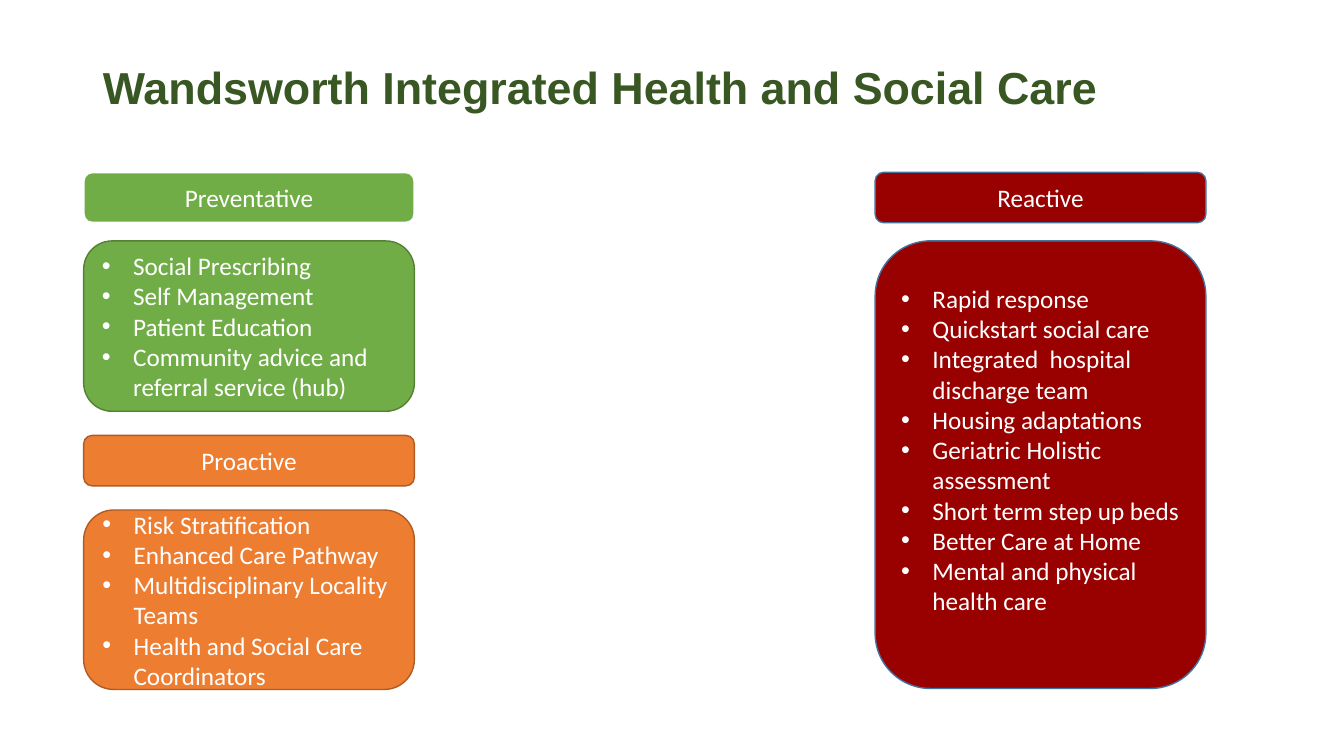
from lxml import etree
from pptx import Presentation
from pptx.dml.color import RGBColor
from pptx.enum.shapes import MSO_SHAPE
from pptx.enum.text import MSO_ANCHOR, PP_ALIGN
from pptx.oxml.ns import qn
from pptx.util import Inches, Pt

ROUND = MSO_SHAPE.ROUNDED_RECTANGLE
MIDDLE = MSO_ANCHOR.MIDDLE
LEFT, CENTER = PP_ALIGN.LEFT, PP_ALIGN.CENTER

WHITE = RGBColor(0xFF, 0xFF, 0xFF)
FOREST = RGBColor(0x38, 0x57, 0x23)
GREEN = RGBColor(0x70, 0xAD, 0x47)
MOSS = RGBColor(0x53, 0x80, 0x35)
ORANGE = RGBColor(0xED, 0x7D, 0x31)
RUST = RGBColor(0xAF, 0x5C, 0x24)
RED = RGBColor(0x99, 0x00, 0x00)
BLUE = RGBColor(0x43, 0x73, 0x9E)

WIDTH, HEAD = 3.28, 0.5  # card width, heading height
INDENT = Inches(0.31)


def add_card(x, y, height, fill, edge, weight, lines):
    card = slide.shapes.add_shape(
        ROUND, Inches(x), Inches(y), Inches(WIDTH), Inches(height))
    card.shadow.inherit = False
    card.fill.solid()
    card.fill.fore_color.rgb = fill
    card.line.color.rgb = edge
    card.line.width = Pt(weight)
    frame = card.text_frame
    frame.word_wrap = True
    frame.vertical_anchor = MIDDLE
    frame.text = "\n".join(lines)
    for para in frame.paragraphs:
        para.alignment = CENTER
        para.font.name = "Calibri"
        para.font.size = Pt(18)
        para.font.color.rgb = WHITE
    return frame


def add_bullets(frame):
    for para in frame.paragraphs:
        para.alignment = LEFT
        props = para._p.get_or_add_pPr()
        props.set("marL", str(INDENT))
        props.set("indent", str(-INDENT))
        font = etree.Element(qn("a:buFont"), typeface="Arial")
        mark = etree.Element(qn("a:buChar"), char="•")
        props.insert(0, font)
        props.insert(1, mark)


prs = Presentation()
prs.slide_width = Inches(13.33)
prs.slide_height = Inches(7.5)
slide = prs.slides.add_slide(prs.slide_layouts[5])

# Title
title = slide.shapes.title
title.left, title.top = Inches(0.92), Inches(0.4)
title.width, title.height = Inches(11.5), Inches(0.99)
title.text_frame.text = "Wandsworth Integrated Health and Social Care"
title.text_frame.vertical_anchor = MIDDLE
para = title.text_frame.paragraphs[0]
para.alignment = LEFT
para.line_spacing = 0.9
para.font.name = "Arial"
para.font.size = Pt(32)
para.font.bold = True
para.font.color.rgb = FOREST

# Care types: heading, x, heading y, list y, list height, fill,
# heading edge and weight, list edge, bottom inset, items
groups = [
    ("Preventative", 0.83, 1.71, 2.39, 1.69, GREEN, WHITE, 1.5, MOSS, 0.05, [
        "Social Prescribing",
        "Self Management",
        "Patient Education",
        "Community advice and referral service (hub)",
    ]),
    ("Proactive", 0.83, 4.32, 5.06, 1.78, ORANGE, RUST, 1, RUST, 0.05, [
        "Risk Stratification",
        "Enhanced Care Pathway",
        "Multidisciplinary Locality Teams",
        "Health and Social Care Coordinators",
    ]),
    ("Reactive", 8.68, 1.71, 2.39, 4.44, RED, BLUE, 1, BLUE, 0.35, [
        "Rapid response",
        "Quickstart social care",
        "Integrated  hospital discharge team",
        "Housing adaptations",
        "Geriatric Holistic assessment",
        "Short term step up beds",
        "Better Care at Home",
        "Mental and physical health care",
    ]),
]

# Heading and bulleted card for each care type
for name, x, top, y, height, fill, rim, weight, edge, inset, items in groups:
    add_card(x, top, HEAD, fill, rim, weight, [name])
    frame = add_card(x, y, height, fill, edge, 1, items)
    frame.margin_bottom = Inches(inset)
    add_bullets(frame)

prs.save("out.pptx")
